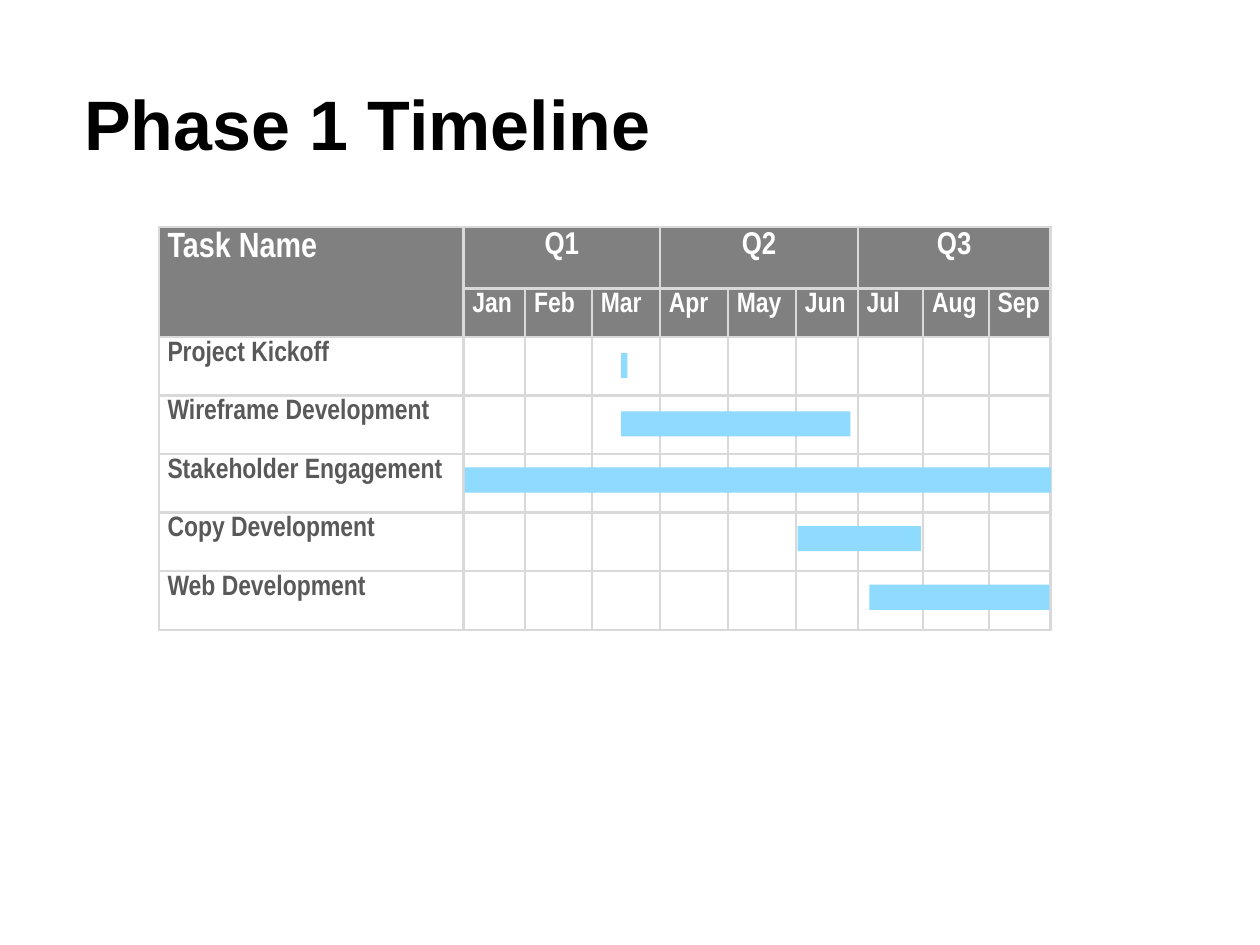
import pptx
import pptx.dml.color
import pptx.enum.shapes
import pptx.enum.text
import pptx.oxml.ns
import pptx.util
from lxml import etree

Inches = pptx.util.Inches
Pt = pptx.util.Pt
RGBColor = pptx.dml.color.RGBColor
ALIGN = pptx.enum.text.PP_ALIGN
ANCHOR = pptx.enum.text.MSO_ANCHOR

BLACK = RGBColor(0x00, 0x00, 0x00)
WHITE = RGBColor(0xFF, 0xFF, 0xFF)
HEADER_GRAY = RGBColor(0x80, 0x80, 0x80)
TASK_GRAY = RGBColor(0x59, 0x59, 0x59)
BORDER_GRAY = RGBColor(0xD9, 0xD9, 0xD9)
BAR_BLUE = RGBColor(0x8F, 0xDA, 0xFF)

TITLE = "Phase 1 Timeline"
QUARTERS = {
    "Q1": ["Jan", "Feb", "Mar"],
    "Q2": ["Apr", "May", "Jun"],
    "Q3": ["Jul", "Aug", "Sep"],
}
# Task name, bar left, bar width, gap from row top to bar (inches)
TASKS = [
    ("Project Kickoff", 4.93, 0.05, 0.13),
    ("Wireframe Development", 4.93, 1.82, 0.13),
    ("Stakeholder Engagement", 3.69, 4.65, 0.11),
    ("Copy Development", 6.33, 0.98, 0.11),
    ("Web Development", 6.9, 1.43, 0.11),
]

TABLE_LEFT, TABLE_TOP = 1.26, 1.8
COLUMN_WIDTHS = [2.42, 0.49, 0.53, 0.54, 0.54, 0.54, 0.49, 0.52, 0.52, 0.49]
HEADER_HEIGHTS = [0.49, 0.38]
TASK_HEIGHT = 0.465
BAR_HEIGHT = 0.2


def add_text(paragraph, text, size, color, font="Arial Narrow"):
    run = paragraph.add_run()
    run.text = text
    run.font.name = font
    run.font.size = Pt(size)
    run.font.bold = True
    run.font.color.rgb = color


def add_borders(cell):
    properties = cell._tc.get_or_add_tcPr()
    qn = pptx.oxml.ns.qn
    for side in ("a:lnL", "a:lnR", "a:lnT", "a:lnB"):
        line = etree.SubElement(properties, qn(side), w=str(Pt(1.5)))
        fill = etree.SubElement(line, qn("a:solidFill"))
        etree.SubElement(fill, qn("a:srgbClr"), val=str(BORDER_GRAY))


def prepare_cell(cell, is_header):
    cell.margin_left = cell.margin_right = Inches(0.07)
    cell.margin_top = cell.margin_bottom = 0
    add_borders(cell)
    if is_header:
        cell.fill.solid()
        cell.fill.fore_color.rgb = HEADER_GRAY
    else:
        cell.fill.background()


def write_cell(cell, text, size, color=WHITE, align=ALIGN.LEFT):
    paragraph = cell.text_frame.paragraphs[0]
    paragraph.alignment = align
    paragraph.line_spacing = 1.15
    add_text(paragraph, text, size, color)


def add_title(slide):
    box = slide.shapes.add_textbox(Inches(0.57), Inches(0.5), Inches(8.6), Inches(0.95))
    frame = box.text_frame
    frame.word_wrap = True
    frame.vertical_anchor = ANCHOR.MIDDLE
    add_text(frame.paragraphs[0], TITLE, 40, BLACK, "Arial")


def add_schedule(slide):
    row_heights = HEADER_HEIGHTS + [TASK_HEIGHT] * len(TASKS)
    frame = slide.shapes.add_table(
        len(row_heights), len(COLUMN_WIDTHS), Inches(TABLE_LEFT), Inches(TABLE_TOP),
        Inches(sum(COLUMN_WIDTHS)), Inches(sum(row_heights)))
    table = frame.table
    table.first_row = table.horz_banding = False
    for column, width in zip(table.columns, COLUMN_WIDTHS):
        column.width = Inches(width)
    for index, (row, height) in enumerate(zip(table.rows, row_heights)):
        row.height = Inches(height)
        for cell in row.cells:
            prepare_cell(cell, index < len(HEADER_HEIGHTS))

    table.cell(0, 0).merge(table.cell(1, 0))
    write_cell(table.cell(0, 0), "Task Name", 20)
    column = 1
    for quarter, months in QUARTERS.items():
        table.cell(0, column).merge(table.cell(0, column + len(months) - 1))
        write_cell(table.cell(0, column), quarter, 18, align=ALIGN.CENTER)
        for month in months:
            write_cell(table.cell(1, column), month, 16)
            column += 1
    for row, task in enumerate(TASKS, start=len(HEADER_HEIGHTS)):
        write_cell(table.cell(row, 0), task[0], 16, TASK_GRAY)


def add_bars(slide):
    first_top = TABLE_TOP + sum(HEADER_HEIGHTS)
    for index, (_, left, width, gap) in enumerate(TASKS):
        top = first_top + index * TASK_HEIGHT + gap
        bar = slide.shapes.add_shape(
            pptx.enum.shapes.MSO_SHAPE.RECTANGLE,
            Inches(left), Inches(top), Inches(width), Inches(BAR_HEIGHT))
        bar.shadow.inherit = False
        bar.fill.solid()
        bar.fill.fore_color.rgb = BAR_BLUE
        bar.line.fill.background()


def main():
    presentation = pptx.Presentation()
    presentation.slide_width = Inches(10)
    presentation.slide_height = Inches(7.5)
    slide = presentation.slides.add_slide(presentation.slide_layouts[6])
    add_title(slide)
    add_schedule(slide)
    add_bars(slide)
    presentation.save("out.pptx")


if __name__ == "__main__":
    main()
